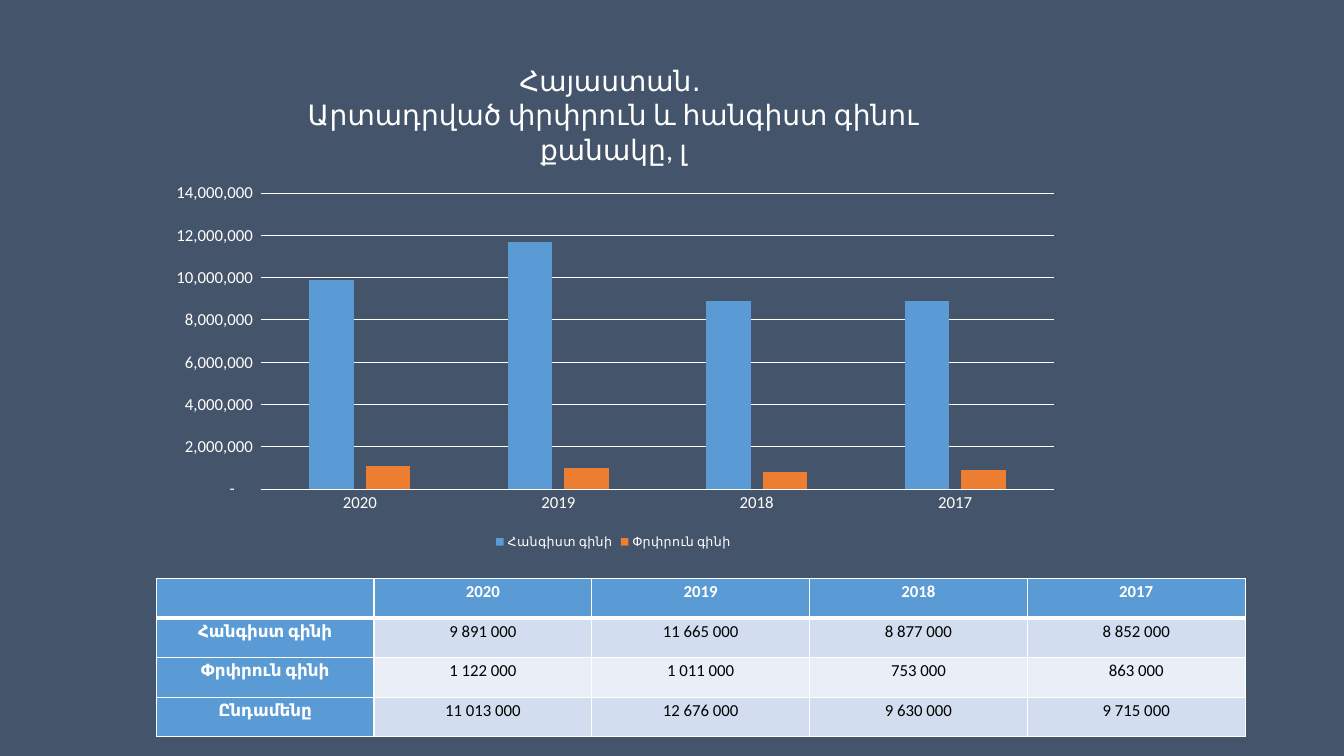
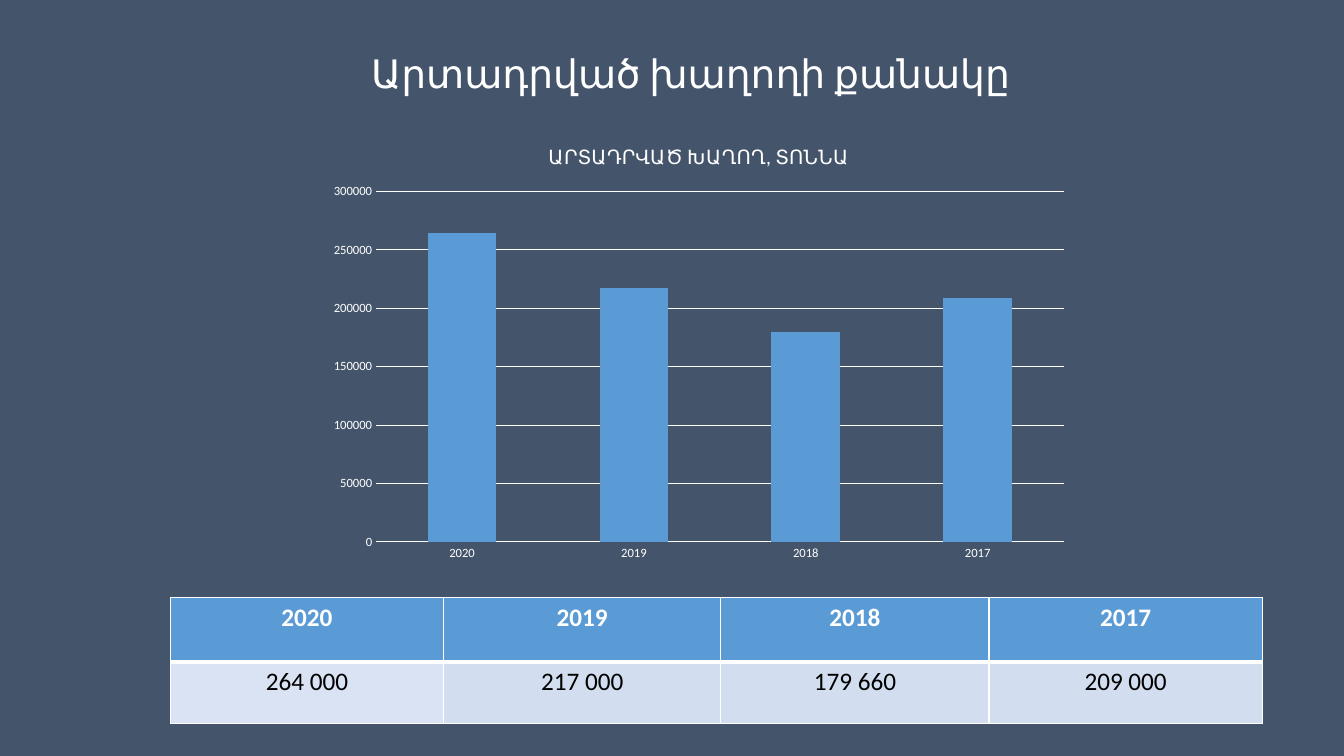
from dataclasses import dataclass

import lxml.etree
import pptx
import pptx.chart.data
import pptx.dml.color
import pptx.dml.line
import pptx.enum.chart
import pptx.enum.text
import pptx.oxml.ns
import pptx.presentation
import pptx.slide
import pptx.table
import pptx.text.text
import pptx.util
from pptx.dml.color import RGBColor
from pptx.util import Inches

NAVY = RGBColor(0x44, 0x54, 0x6A)
WHITE = RGBColor(0xFF, 0xFF, 0xFF)
BLACK = RGBColor(0, 0, 0)
BLUE = RGBColor(0x5B, 0x9B, 0xD5)
ORANGE = RGBColor(0xED, 0x7D, 0x31)
BAND = RGBColor(0xD2, 0xDE, 0xEF)
PALE = RGBColor(0xEA, 0xEF, 0xF7)
LILAC = RGBColor(0xDA, 0xE3, 0xF3)

FONT = "Calibri"
YEARS = ["2020", "2019", "2018", "2017"]
WINES = {
    "Հանգիստ գինի": [9891000, 11665000, 8877000, 8852000],
    "Փրփրուն գինի": [1122000, 1011000, 753000, 863000],
}
GRAPES = [264000, 217000, 179660, 209000]
ACCOUNT = '_(* #,##0_);_(* \\(#,##0\\);_(* "-"??_);_('

Box = tuple[float, float, float, float]


@dataclass
class Graph:
    kind: pptx.enum.chart.XL_CHART_TYPE
    box: Box
    head: list[str]
    head_size: int
    rows: dict[str, list[int]]
    digits: int  # trailing digits rounded away
    size: int  # axis text
    gap: int
    lap: int
    top: int
    step: int
    form: str = "General"
    legend: bool = False


@dataclass
class Grid:
    left: float
    top: float
    cols: list[float]
    rows: list[float]
    cells: list[list[str]]
    fills: list[list[RGBColor]]
    size: int


def style(font: pptx.text.text.Font, size: int,
          color: RGBColor = WHITE, bold: bool = False) -> None:
    font.name, font.size, font.bold = FONT, pptx.util.Pt(size), bold
    font.color.rgb = color


def white_line(line: pptx.dml.line.LineFormat) -> None:
    line.color.rgb = WHITE
    line.width = pptx.util.Pt(0.75)


def draw_graph(slide: pptx.slide.Slide, graph: Graph) -> None:
    data = pptx.chart.data.CategoryChartData()
    data.categories = YEARS
    for name, values in graph.rows.items():
        data.add_series(name, [round(value, -graph.digits) for value in values])
    frame = slide.shapes.add_chart(graph.kind, *map(Inches, graph.box), data)
    chart = frame.chart
    style(chart.font, 10)

    # Title
    chart.has_title = True
    text = chart.chart_title.text_frame
    text.text = "\n".join(graph.head)
    for para in text.paragraphs:
        style(para.font, graph.head_size)
    chart.chart_title.include_in_layout = False

    # Axes
    for axis in (chart.category_axis, chart.value_axis):
        style(axis.tick_labels.font, graph.size)
        axis.major_tick_mark = pptx.enum.chart.XL_TICK_MARK.NONE
        axis.minor_tick_mark = pptx.enum.chart.XL_TICK_MARK.NONE
    white_line(chart.category_axis.format.line)
    scale = chart.value_axis
    scale.format.line.fill.background()
    scale.has_major_gridlines = True
    white_line(scale.major_gridlines.format.line)
    scale.minimum_scale, scale.maximum_scale = 0, graph.top
    scale.major_unit = graph.step
    scale.tick_labels.number_format = graph.form
    scale.tick_labels.number_format_is_linked = False

    # Bars
    bars = chart.plots[0]
    bars.gap_width, bars.overlap = graph.gap, graph.lap
    bars.vary_by_categories = False
    for series, color in zip(bars.series, (BLUE, ORANGE)):
        series.format.fill.solid()
        series.format.fill.fore_color.rgb = color

    # Legend
    chart.has_legend = graph.legend
    if graph.legend:
        chart.legend.position = pptx.enum.chart.XL_LEGEND_POSITION.BOTTOM
        chart.legend.include_in_layout = False
        style(chart.legend.font, 9)


def edge(cell: pptx.table._Cell, side: str, width: int) -> None:
    """Draw a white border on one side: L, R, T or B."""
    qn = pptx.oxml.ns.qn
    props = cell._tc.get_or_add_tcPr()
    line = lxml.etree.SubElement(props, qn("a:ln" + side))
    line.set("w", str(pptx.util.Pt(width)))
    fill = lxml.etree.SubElement(line, qn("a:solidFill"))
    lxml.etree.SubElement(fill, qn("a:srgbClr")).set("val", str(WHITE))


def draw_grid(slide: pptx.slide.Slide, grid: Grid) -> None:
    frame = slide.shapes.add_table(
        len(grid.rows), len(grid.cols), Inches(grid.left), Inches(grid.top),
        Inches(sum(grid.cols)), Inches(sum(grid.rows)))
    table = frame.table
    table.first_row = table.horz_banding = False
    for col, width in zip(table.columns, grid.cols):
        col.width = Inches(width)
    for r, height in enumerate(grid.rows):
        table.rows[r].height = Inches(height)
        for c, text in enumerate(grid.cells[r]):
            cell = table.cell(r, c)
            # A thick rule parts the header from the body
            for side, thick in (("L", False), ("R", False),
                                ("T", r == 1), ("B", r == 0)):
                edge(cell, side, 3 if thick else 1)
            fill = grid.fills[r][c]
            cell.fill.solid()
            cell.fill.fore_color.rgb = fill
            cell.margin_left = cell.margin_right = Inches(0.07)
            cell.margin_top = cell.margin_bottom = 0
            cell.text = text
            para = cell.text_frame.paragraphs[0]
            para.alignment = pptx.enum.text.PP_ALIGN.CENTER
            para.line_spacing = 1.15
            head = fill == BLUE
            style(para.font, grid.size, WHITE if head else BLACK, head)


def draw_title(slide: pptx.slide.Slide, text: str, box: Box) -> None:
    title = slide.shapes.title
    title.left, title.top, title.width, title.height = map(Inches, box)
    title.text = text
    title.text_frame.vertical_anchor = pptx.enum.text.MSO_ANCHOR.TOP
    para = title.text_frame.paragraphs[0]
    para.alignment = pptx.enum.text.PP_ALIGN.CENTER
    style(para.font, 28)


def spaced(values: list[int]) -> list[str]:
    return [f"{value:,}".replace(",", " ") for value in values]


def wine_slide(deck: pptx.presentation.Presentation) -> None:
    slide = deck.slides.add_slide(deck.slide_layouts[6])
    draw_graph(slide, Graph(
        pptx.enum.chart.XL_CHART_TYPE.COLUMN_CLUSTERED,
        (1.53, 0.43, 9.11, 5.06),
        ["Հայաստան․ ", "Արտադրված փրփրուն և հանգիստ գինու քանակը, լ"], 20,
        WINES, digits=5, size=12, gap=219, lap=-27,
        top=14000000, step=2000000, form=ACCOUNT, legend=True))
    total = [sum(pair) for pair in zip(*WINES.values())]
    body = {**WINES, "Ընդամենը": total}
    draw_grid(slide, Grid(
        1.55, 5.74, [2.16] * 5, [1.57 / 4] * 4,
        [["", *YEARS]] + [[name, *spaced(row)] for name, row in body.items()],
        [[BLUE] * 5] + [[BLUE] + [tint] * 4 for tint in (BAND, PALE, BAND)],
        12))


def grape_slide(deck: pptx.presentation.Presentation) -> None:
    slide = deck.slides.add_slide(deck.slide_layouts[5])
    draw_title(slide, "Արտադրված խաղողի քանակը", (1.41, 0.44, 10.88, 0.57))
    draw_graph(slide, Graph(
        pptx.enum.chart.XL_CHART_TYPE.COLUMN_STACKED,
        (3.16, 1.24, 7.54, 4.41),
        ["ԱՐՏԱԴՐՎԱԾ ԽԱՂՈՂ, ՏՈՆՆԱ"], 14, {"Series 1": GRAPES}, digits=3,
        size=9, gap=150, lap=100, top=300000, step=50000))
    draw_grid(slide, Grid(
        1.69, 5.93, [2.71, 2.75, 2.66, 2.71], [0.64, 0.61],
        [YEARS, spaced(GRAPES)],
        [[BLUE] * 4, [LILAC] + [BAND] * 3], 18))


def main() -> None:
    deck = pptx.Presentation()
    deck.slide_width, deck.slide_height = Inches(13.33), Inches(7.5)
    back = deck.slide_master.background.fill
    back.solid()
    back.fore_color.rgb = NAVY
    wine_slide(deck)
    grape_slide(deck)
    deck.save("out.pptx")


if __name__ == "__main__":
    main()
